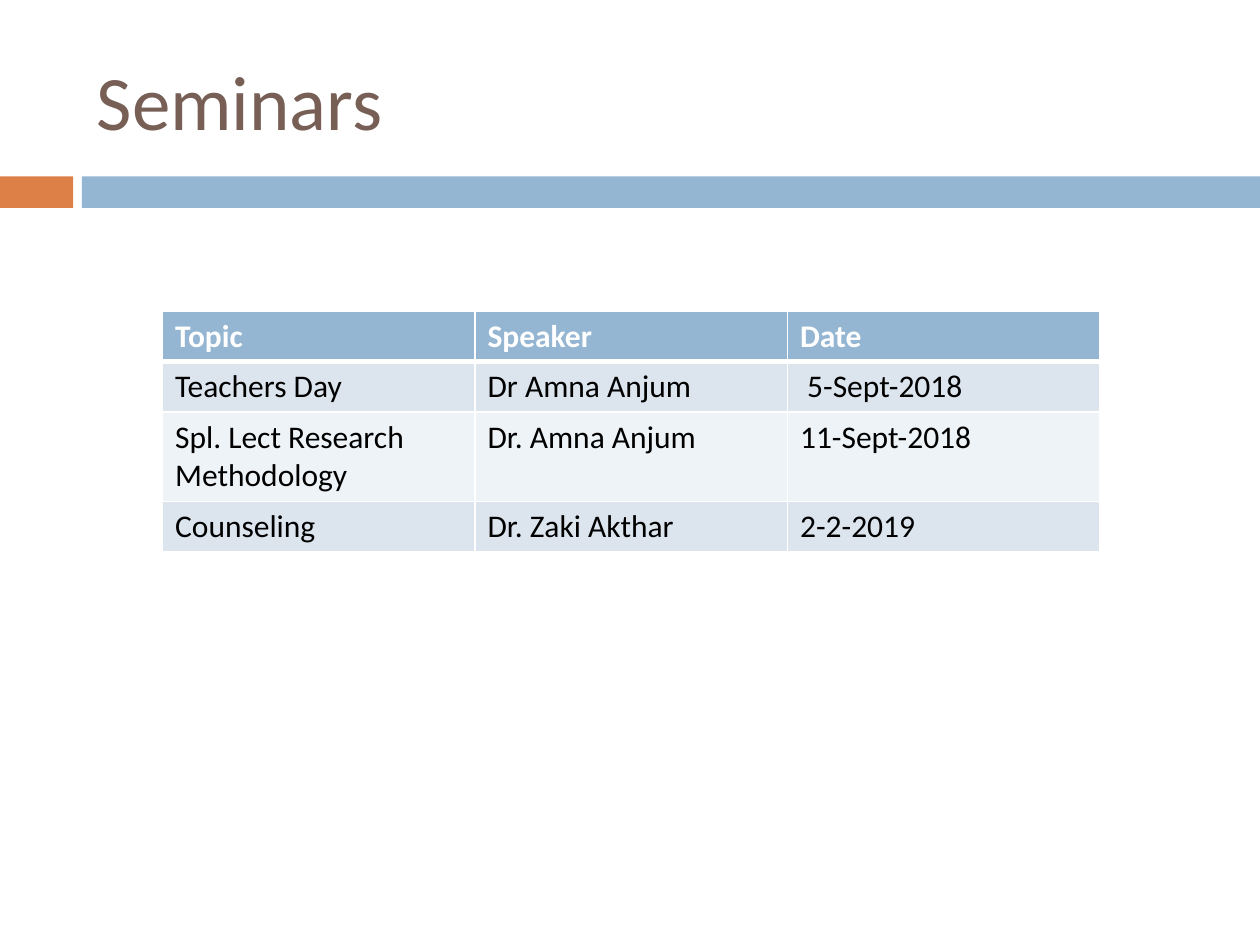
from dataclasses import dataclass

from lxml.etree import SubElement
from pptx import Presentation
from pptx.dml.color import RGBColor
from pptx.enum.shapes import MSO_SHAPE as Shape
from pptx.enum.text import MSO_ANCHOR as Anchor
from pptx.oxml.ns import qn
from pptx.util import Inches, Pt

FONT = "Calibri"
COLORS = {
    "orange": "DD8047",
    "blue": "94B6D2",
    "brown": "775F55",
    "white": "FFFFFF",
    "black": "000000",
    "band_dark": "DCE5EE",
    "band_light": "EEF3F7",
}
ROWS = [
    ("Topic", "Speaker", "Date"),
    ("Teachers Day", "Dr Amna Anjum", " 5-Sept-2018"),
    ("Spl. Lect Research Methodology", "Dr. Amna Anjum", "11-Sept-2018"),
    ("Counseling", "Dr. Zaki Akthar", "2-2-2019"),
]
ROW_HEIGHTS = [0.4, 0.4, 0.71, 0.4]
COL_WIDTH = 2.48


@dataclass
class Bar:
    left: float
    width: float
    color: str


BARS = [Bar(0, 0.58, "orange"), Bar(0.65, 9.35, "blue")]


def rgb(name: str) -> RGBColor:
    return RGBColor.from_string(COLORS[name])


def style_text(tf, size: float, color: str, bold: bool = False) -> None:
    for p in tf.paragraphs:
        for r in p.runs:
            r.font.name = FONT
            r.font.size = Pt(size)
            r.font.bold = bold
            r.font.color.rgb = rgb(color)


def draw_bar(slide, bar: Bar) -> None:
    sp = slide.shapes.add_shape(Shape.RECTANGLE, Inches(bar.left), Inches(1.4),
                                Inches(bar.width), Inches(0.25))
    sp.shadow.inherit = False
    sp.fill.solid()
    sp.fill.fore_color.rgb = rgb(bar.color)
    sp.line.fill.background()


def draw_title(slide, text: str) -> None:
    sp = slide.shapes.add_textbox(Inches(0.67), Inches(0.25), Inches(8.92), Inches(1.08))
    tf = sp.text_frame
    tf.word_wrap = True
    tf.vertical_anchor = Anchor.MIDDLE
    tf.text = text
    style_text(tf, 44, "brown")


def set_border(cell, side: str, width: float) -> None:
    ln = SubElement(cell._tc.get_or_add_tcPr(), qn(f"a:{side}"), w=str(Pt(width)))
    fill = SubElement(ln, qn("a:solidFill"))
    SubElement(fill, qn("a:srgbClr"), val=COLORS["white"])


def draw_cell(cell, text: str, row: int) -> None:
    header = row == 0
    cell.text = text
    style_text(cell.text_frame, 18, "white" if header else "black", header)
    # Borders come before the fill; a thick line divides header and body
    for side in ("lnL", "lnR", "lnT", "lnB"):
        thick = (row, side) in ((0, "lnB"), (1, "lnT"))
        set_border(cell, side, 3 if thick else 1)
    cell.fill.solid()
    band = "band_dark" if row % 2 else "band_light"
    cell.fill.fore_color.rgb = rgb("blue" if header else band)


def draw_table(slide) -> None:
    n_cols = len(ROWS[0])
    table = slide.shapes.add_table(
        len(ROWS), n_cols, Inches(1.29), Inches(2.47),
        Inches(COL_WIDTH * n_cols), Inches(sum(ROW_HEIGHTS))).table
    for col in table.columns:
        col.width = Inches(COL_WIDTH)
    for i, (texts, height) in enumerate(zip(ROWS, ROW_HEIGHTS)):
        table.rows[i].height = Inches(height)
        for j, text in enumerate(texts):
            draw_cell(table.cell(i, j), text, i)


def main() -> None:
    prs = Presentation()
    prs.slide_width, prs.slide_height = Inches(10), Inches(7.5)
    s = prs.slides.add_slide(prs.slide_layouts[6])

    # Divider under the title
    for bar in BARS:
        draw_bar(s, bar)

    # Title and seminar list
    draw_title(s, "Seminars")
    draw_table(s)
    prs.save("out.pptx")


if __name__ == "__main__":
    main()
